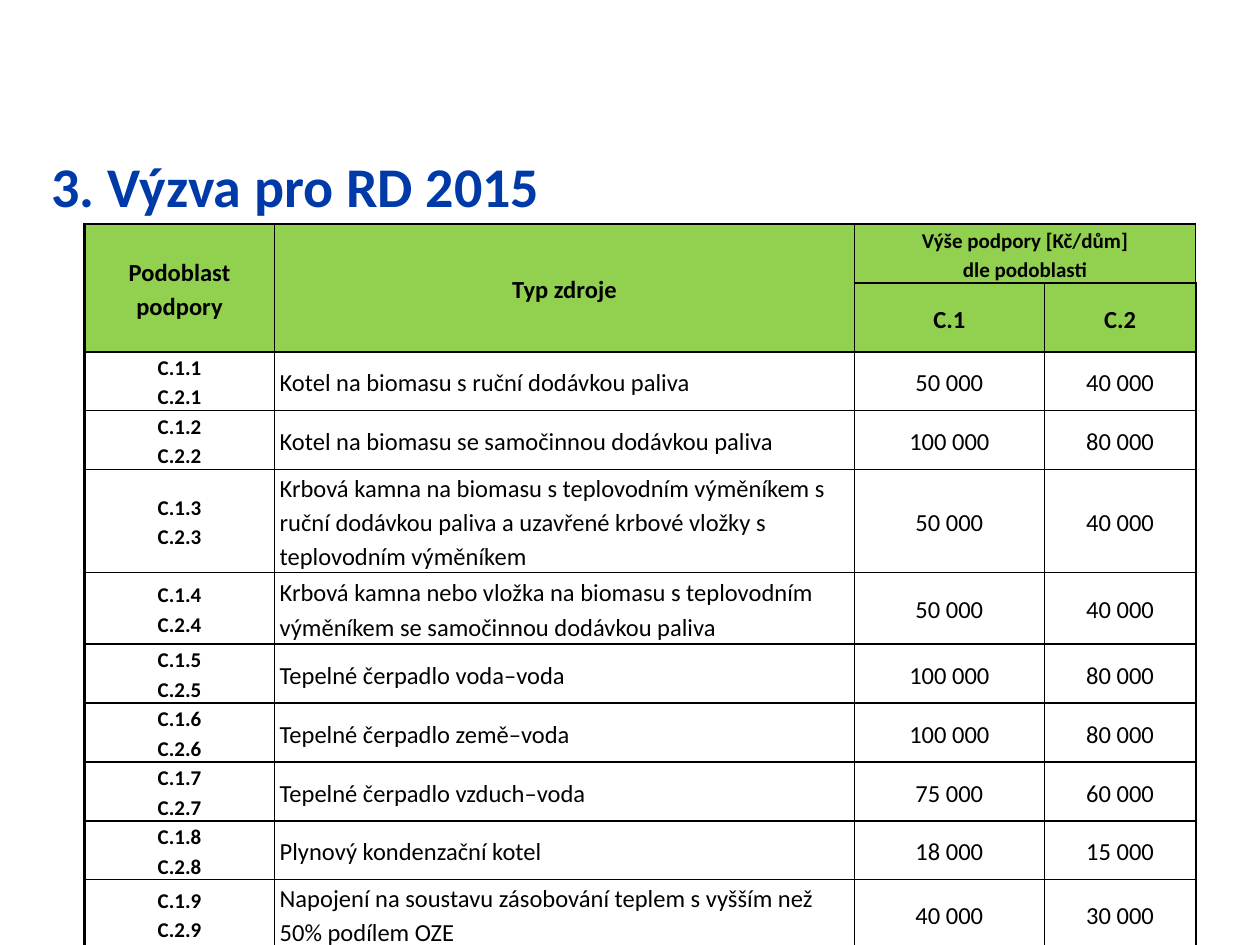
from copy import deepcopy

from lxml.etree import SubElement
from pptx import Presentation
from pptx.dml.color import RGBColor
from pptx.enum.text import MSO_ANCHOR, MSO_AUTO_SIZE, PP_ALIGN
from pptx.oxml.ns import qn
from pptx.util import Inches, Pt

COLORS = {"title": "003AA9", "text": "000000", "border": "000000", "header": "92D050"}
COLUMN_WIDTHS = [1.51, 4.6, 1.51, 1.2]
ROW_HEIGHTS = [0.46, 0.53, 0.46, 0.46, 0.81, 0.57, 0.46, 0.46, 0.46, 0.46, 0.53]
HEADER_ROWS = 2

# Heat source, support in C.1, support in C.2
SOURCES = [
    ("Kotel na biomasu s ruční dodávkou paliva", 50000, 40000),
    ("Kotel na biomasu se samočinnou dodávkou paliva", 100000, 80000),
    ("Krbová kamna na biomasu s teplovodním výměníkem s ruční dodávkou paliva "
     "a uzavřené krbové vložky s teplovodním výměníkem", 50000, 40000),
    ("Krbová kamna nebo vložka na biomasu s teplovodním výměníkem "
     "se samočinnou dodávkou paliva", 50000, 40000),
    ("Tepelné čerpadlo voda–voda", 100000, 80000),
    ("Tepelné čerpadlo země–voda", 100000, 80000),
    ("Tepelné čerpadlo vzduch–voda", 75000, 60000),
    ("Plynový kondenzační kotel", 18000, 15000),
    ("Napojení na soustavu zásobování teplem s vyšším než 50% podílem OZE", 40000, 30000),
]


def write_text(frame, text, size=14, bold=False, color="text", font="Calibri",
               align=PP_ALIGN.CENTER, spacing=None, indent=0):
    """Newlines part paragraphs; a vertical tab breaks a line inside one."""
    for number, line in enumerate(text.split("\n")):
        paragraph = frame.add_paragraph() if number else frame.paragraphs[0]
        paragraph.text = line
        paragraph.alignment = align
        if spacing:
            paragraph.line_spacing = spacing
        if indent:
            paragraph._p.get_or_add_pPr().set("indent", str(Inches(indent)))
        for run in paragraph.runs:
            run.font.name = font
            run.font.size = Pt(size)
            run.font.bold = bold
            run.font.color.rgb = RGBColor.from_string(COLORS[color])
        for line_break in paragraph._p.findall(qn("a:br")):
            line_break.append(deepcopy(paragraph.runs[0]._r.rPr))


class SlideBuilder:
    cell_margin = 0.04
    inner_line = 1
    outer_line = 1.5

    def __init__(self, presentation):
        self.slide = presentation.slides.add_slide(presentation.slide_layouts[5])

    def title(self, text, left, top, width, height):
        title = self.slide.shapes.title
        title.left, title.top = Inches(left), Inches(top)
        title.width, title.height = Inches(width), Inches(height)
        frame = title.text_frame
        frame.word_wrap = True
        frame.auto_size = MSO_AUTO_SIZE.NONE
        frame.vertical_anchor = MSO_ANCHOR.TOP
        write_text(frame, text, size=32, bold=True, color="title", align=PP_ALIGN.LEFT)

    def table(self, left, top, widths, heights):
        table = self.slide.shapes.add_table(
            len(heights), len(widths), Inches(left), Inches(top),
            Inches(sum(widths)), Inches(sum(heights))).table
        table.first_row = table.horz_banding = False
        for column, width in zip(table.columns, widths):
            column.width = Inches(width)
        for row, height in zip(table.rows, heights):
            row.height = Inches(height)
        for row in range(len(heights)):
            for column in range(len(widths)):
                outer = {"a:lnL": column == 0, "a:lnR": column == len(widths) - 1,
                         "a:lnT": row == 0, "a:lnB": row == len(heights) - 1}
                self.style_cell(table.cell(row, column), outer, row < HEADER_ROWS)
        return table

    def style_cell(self, cell, outer, is_header):
        cell.margin_left = cell.margin_right = Inches(self.cell_margin)
        cell.margin_top = cell.margin_bottom = 0
        cell.vertical_anchor = MSO_ANCHOR.MIDDLE
        properties = cell._tc.get_or_add_tcPr()
        for side, is_outer in outer.items():
            width = self.outer_line if is_outer else self.inner_line
            line = SubElement(properties, qn(side), w=str(Pt(width)))
            fill = SubElement(line, qn("a:solidFill"))
            SubElement(fill, qn("a:srgbClr"), val=COLORS["border"])
        if is_header:
            cell.fill.solid()
            cell.fill.fore_color.rgb = RGBColor.from_string(COLORS["header"])
        else:
            cell.fill.background()

    def cell_text(self, cell, text, align=PP_ALIGN.CENTER, **style):
        indent = -0.05 if align == PP_ALIGN.CENTER else 0
        write_text(cell.text_frame, text, align=align, spacing=1.15, indent=indent, **style)


def main():
    presentation = Presentation()
    presentation.slide_width, presentation.slide_height = Inches(10), Inches(7.5)
    builder = SlideBuilder(presentation)
    builder.title("3. Výzva pro RD 2015", 0.31, 1.15, 9.41, 0.87)
    support = builder.table(0.67, 1.78, COLUMN_WIDTHS, ROW_HEIGHTS)

    # Header
    for first, last in [((0, 0), (1, 0)), ((0, 1), (1, 1)), ((0, 2), (0, 3))]:
        support.cell(*first).merge(support.cell(*last))
    headings = [(0, 0, "Podoblast\npodpory", 14), (0, 1, "Typ zdroje", 14),
                (0, 2, "Výše podpory [Kč/dům]\vdle podoblasti", 12),
                (1, 2, "C.1", 14), (1, 3, "C.2", 14)]
    for row, column, heading, size in headings:
        builder.cell_text(support.cell(row, column), heading, size=size, bold=True)

    # One row per heat source
    for number, (source, *amounts) in enumerate(SOURCES, start=1):
        row = number + HEADER_ROWS - 1
        builder.cell_text(support.cell(row, 0), f"C.1.{number}\nC.2.{number}",
                          size=12, bold=True)
        builder.cell_text(support.cell(row, 1), source, align=PP_ALIGN.LEFT)
        for column, amount in enumerate(amounts, start=2):
            builder.cell_text(support.cell(row, column), f"{amount:,}".replace(",", " "))

    presentation.save("out.pptx")


if __name__ == "__main__":
    main()
